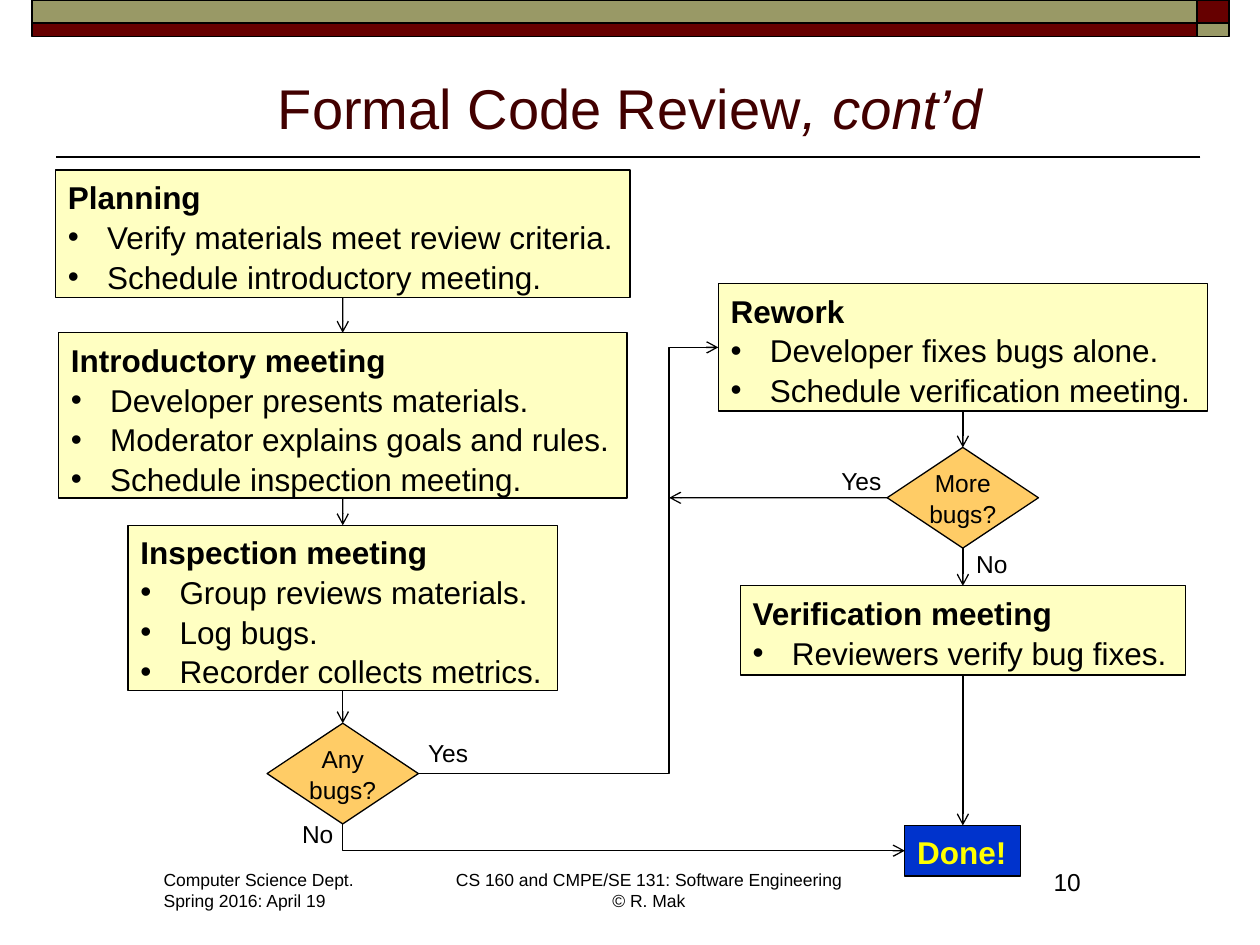
"""Build the formal code review flowchart slide."""
from lxml.etree import SubElement
from pptx import Presentation
from pptx.dml.color import RGBColor
from pptx.enum.shapes import MSO_CONNECTOR, MSO_SHAPE
from pptx.enum.text import MSO_ANCHOR, PP_ALIGN
from pptx.oxml.ns import qn
from pptx.util import Cm, Pt

BOTTOM, LEFT, RIGHT, TOP = 2, 1, 3, 0
LEFT_AXIS, RIGHT_AXIS, MERGE_X = 6.91, 19.41, 13.49
BLACK, MAROON, OLIVE, CREAM, AMBER = "000000", "660000", "999966", "FFFFC2", "FFCC66"


def color(value):
    """Turn a hex string into a colour."""
    return RGBColor.from_string(value)


class FlowSlide:
    """Hold the style and the current slide, and draw its elements."""

    font_name = "Arial"
    line_width = 0.75

    def __init__(self, slide):
        """Keep the slide to draw on."""
        self.slide = slide

    def style(self, paragraph, size, text_color=BLACK, bold=False, align=PP_ALIGN.LEFT):
        """Set the font and alignment of a paragraph."""
        paragraph.alignment = align
        font = paragraph.font
        font.name, font.size, font.bold = self.font_name, Pt(size), bold
        font.color.rgb = color(text_color)

    def shape(self, kind, left, top, width, height, fill, line_width=line_width):
        """Draw a filled, outlined preset shape."""
        shape = self.slide.shapes.add_shape(kind, Cm(left), Cm(top), Cm(width), Cm(height))
        shape.shadow.inherit = False
        shape.fill.solid()
        shape.fill.fore_color.rgb = color(fill)
        shape.line.color.rgb = color(BLACK)
        shape.line.width = Pt(line_width)
        return shape

    def box(self, center, top, width, height, heading, items=(), fill=CREAM, text_color=BLACK):
        """Draw a step with a bold heading and bulleted items."""
        shape = self.shape(MSO_SHAPE.RECTANGLE, center - width / 2, top, width, height, fill)
        frame = shape.text_frame
        frame.word_wrap = False
        frame.vertical_anchor = MSO_ANCHOR.TOP
        frame.text = "\n".join([heading, *items])
        for index, paragraph in enumerate(frame.paragraphs):
            if index:
                properties = paragraph._p.get_or_add_pPr()
                properties.set("marL", str(Cm(0.79)))
                properties.set("indent", str(-Cm(0.79)))
                SubElement(properties, qn("a:buFont"), typeface=self.font_name)
                SubElement(properties, qn("a:buChar"), char="•")
            self.style(paragraph, 18, text_color, bold=index == 0)
            paragraph.line_spacing = 1.05
        return shape

    def decision(self, center, top, text):
        """Draw a diamond holding a question."""
        width, height = 3.05, 2.03
        shape = self.shape(MSO_SHAPE.DIAMOND, center - width / 2, top, width, height, AMBER)
        frame = shape.text_frame
        frame.word_wrap = False
        frame.vertical_anchor = MSO_ANCHOR.MIDDLE
        frame.text = text
        for paragraph in frame.paragraphs:
            self.style(paragraph, 14, align=PP_ALIGN.CENTER)
            paragraph.line_spacing = 1.05
        return shape

    def text(self, left, top, width, height, text, size, align=PP_ALIGN.LEFT, text_color=BLACK):
        """Place plain text and return its frame."""
        shape = self.slide.shapes.add_textbox(Cm(left), Cm(top), Cm(width), Cm(height))
        frame = shape.text_frame
        frame.word_wrap = True
        frame.text = text
        for paragraph in frame.paragraphs:
            self.style(paragraph, size, text_color, align=align)
        return frame

    def line(self, start, end, width=line_width, kind=MSO_CONNECTOR.STRAIGHT):
        """Draw a connector between two points."""
        points = [Cm(value) for value in (*start, *end)]
        connector = self.slide.shapes.add_connector(kind, *points)
        connector.line.color.rgb = color(BLACK)
        connector.line.width = Pt(width)
        SubElement(connector._element.spPr, qn("a:effectLst"))
        return connector

    def arrow(self, source, source_side, target=None, target_side=TOP, end=(0, 0),
              kind=MSO_CONNECTOR.STRAIGHT):
        """Draw an arrow from a shape to another shape or to a point."""
        connector = self.line((0, 0), end, kind=kind)
        connector.begin_connect(source, source_side)
        if target is not None:
            connector.end_connect(target, target_side)
        SubElement(connector.line._get_or_add_ln(), qn("a:tailEnd"), type="arrow")
        return connector

    def side_arrow(self, source, target, bend_x):
        """Draw an arrow that turns twice, running upright at bend_x."""
        connector = self.arrow(source, RIGHT, target, LEFT, kind=MSO_CONNECTOR.ELBOW)
        share = (Cm(bend_x) - connector.begin_x) / connector.width
        guides = connector._element.spPr.prstGeom.get_or_add_avLst()
        SubElement(guides, qn("a:gd"), name="adj1", fmla=f"val {round(share * 100000)}")

    def corner_arrow(self, source, target):
        """Draw an arrow that goes down and then right."""
        connector = self.arrow(source, BOTTOM, target, LEFT, kind=MSO_CONNECTOR.ELBOW)
        across, down = connector.width, connector.height
        shift = (across - down) // 2
        connector.left, connector.top = connector.left + shift, connector.top - shift
        connector.width, connector.height = down, across
        properties = connector._element.spPr
        properties.prstGeom.set("prst", "bentConnector2")
        properties.xfrm.set("rot", "16200000")
        properties.xfrm.set("flipH", "1")


def draw_frame(flow):
    """Draw the banner, title and footer."""
    flow.line((24.2, 3.17), (1.12, 3.17), width=1)
    for left, width, fills in ((0.64, 23.49, (OLIVE, MAROON)), (24.13, 0.64, (MAROON, OLIVE))):
        for top, height, fill in zip((0, 0.46), (0.46, 0.28), fills):
            flow.shape(MSO_SHAPE.RECTANGLE, left, top, width, height, fill, line_width=1)
    title = flow.text(1.27, 1.14, 22.86, 1.83, "Formal Code Review", 32, PP_ALIGN.CENTER, "420000")
    title.vertical_anchor = MSO_ANCHOR.BOTTOM
    suffix = title.paragraphs[0].add_run()
    suffix.text = ", cont’d"
    suffix.font.italic = True
    flow.text(3.05, 17.4, 4.52, 1.12, "Computer Science Dept.\nSpring 2016: April 19", 10)
    flow.text(8.89, 17.4, 8.38, 1.12,
              "CS 160 and CMPE/SE 131: Software Engineering\v© R. Mak", 10, PP_ALIGN.CENTER)
    flow.text(16.76, 17.35, 5.28, 1.27, "10", 14, PP_ALIGN.RIGHT)


def draw_flowchart(flow):
    """Draw the review steps, decisions and arrows."""
    planning = flow.box(LEFT_AXIS, 3.43, 11.58, 2.57, "Planning", (
        "Verify materials meet review criteria.", "Schedule introductory meeting."))
    introduction = flow.box(LEFT_AXIS, 6.71, 11.46, 3.33, "Introductory meeting", (
        "Developer presents materials.", "Moderator explains goals and rules.",
        "Schedule inspection meeting."))
    inspection = flow.box(LEFT_AXIS, 10.59, 8.66, 3.33, "Inspection meeting", (
        "Group reviews materials.", "Log bugs.", "Recorder collects metrics."))
    any_bugs = flow.decision(LEFT_AXIS, 14.58, "Any\nbugs?")
    rework = flow.box(RIGHT_AXIS, 5.72, 9.86, 2.57, "Rework", (
        "Developer fixes bugs alone.", "Schedule verification meeting."))
    more_bugs = flow.decision(RIGHT_AXIS, 9.02, "More\nbugs?")
    verification = flow.box(RIGHT_AXIS, 11.81, 8.97, 1.8, "Verification meeting", (
        "Reviewers verify bug fixes.",))
    done = flow.box(RIGHT_AXIS, 16.64, 2.34, 1.02, "Done!", fill="0033CC", text_color="FFFF00")

    for column in ((planning, introduction, inspection, any_bugs),
                   (rework, more_bugs, verification, done)):
        for source, target in zip(column, column[1:]):
            flow.arrow(source, BOTTOM, target)
    flow.side_arrow(any_bugs, rework, MERGE_X)
    flow.corner_arrow(any_bugs, done)
    flow.arrow(more_bugs, LEFT, end=(MERGE_X, 10.035))

    for left, top, answer in ((8.38, 14.76, "Yes"), (16.71, 9.27, "Yes"),
                              (5.84, 16.38, "No"), (19.43, 10.95, "No")):
        flow.text(left, top, 1.32, 0.86, answer, 14)


def main():
    """Create and save the presentation."""
    presentation = Presentation()
    presentation.slide_width, presentation.slide_height = Cm(25.4), Cm(19.05)
    flow = FlowSlide(presentation.slides.add_slide(presentation.slide_layouts[6]))
    draw_frame(flow)
    draw_flowchart(flow)
    presentation.save("out.pptx")


if __name__ == "__main__":
    main()
